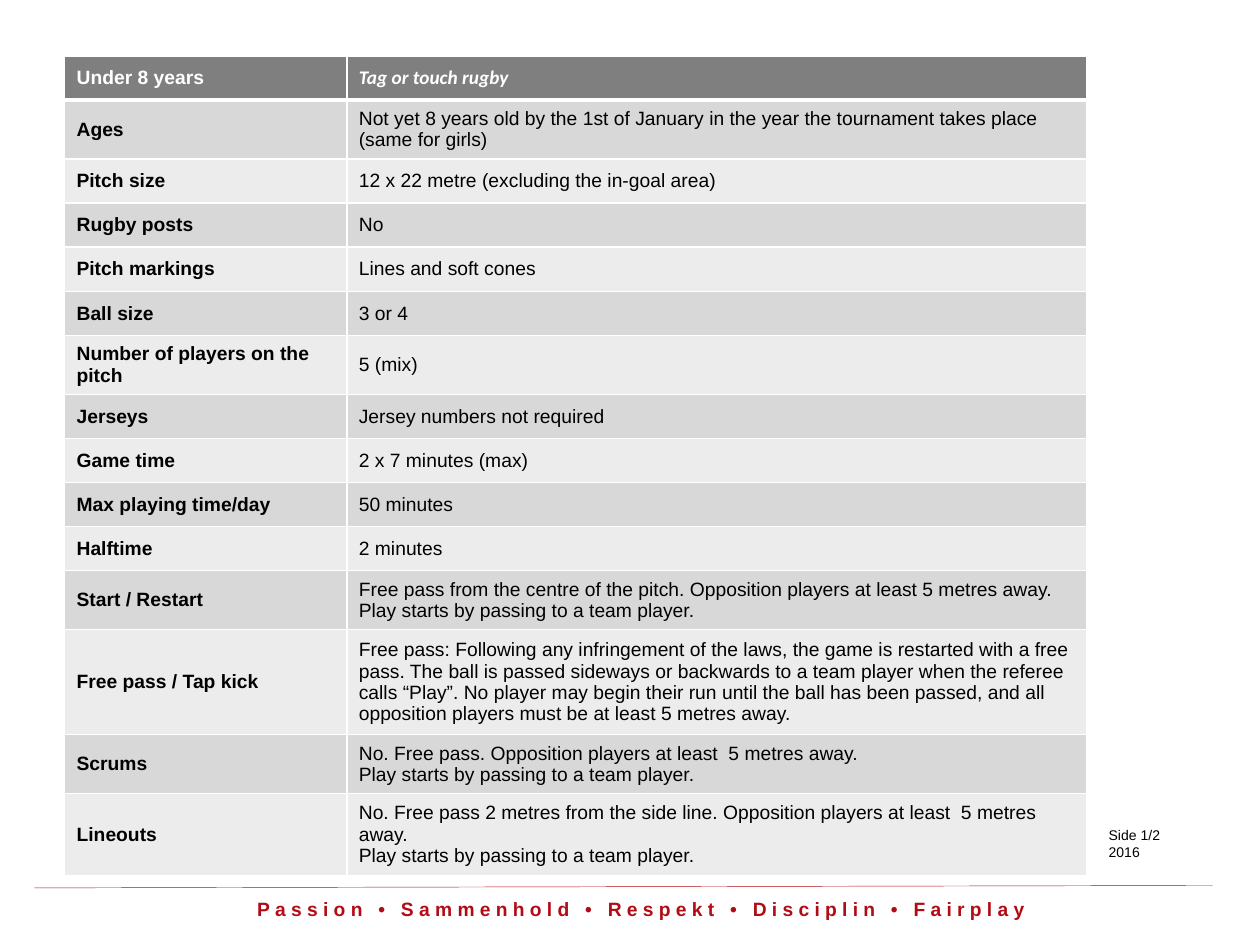
from lxml.etree import SubElement
from pptx import Presentation
from pptx.dml.color import RGBColor
from pptx.enum.shapes import MSO_CONNECTOR
from pptx.enum.text import MSO_ANCHOR, PP_ALIGN
from pptx.oxml.ns import qn
from pptx.util import Pt

COLORS = {"red": "B10C15", "header": "7F7F7F", "dark": "D8D8D8",
          "light": "ECECEC", "white": "FFFFFF", "black": "000000"}


def write_text(frame, text, size=11, color="black", font="Arial", bold=False,
               italic=False, align=PP_ALIGN.LEFT, spacing=0):
    frame.word_wrap = True
    for index, line in enumerate(text.split("\n")):
        paragraph = frame.paragraphs[0] if index == 0 else frame.add_paragraph()
        paragraph.alignment = align
        run = paragraph.add_run()
        run.text = line
        run.font.size = Pt(size)
        run.font.name = font
        run.font.bold = bold
        run.font.italic = italic
        run.font.color.rgb = RGBColor.from_string(COLORS[color])
        if spacing:
            run._r.get_or_add_rPr().set("spc", str(spacing * 100))


def set_borders(cell, widths):
    properties = cell._tc.get_or_add_tcPr()
    for position, (side, width) in enumerate(widths.items()):
        border = properties.makeelement(qn(f"a:ln{side}"), {"w": str(Pt(width))})
        solid = SubElement(border, qn("a:solidFill"))
        SubElement(solid, qn("a:srgbClr"), val=COLORS["white"])
        properties.insert(position, border)


presentation = Presentation()
presentation.slide_width = Pt(720)
presentation.slide_height = Pt(540)
slide = presentation.slides.add_slide(presentation.slide_layouts[6])

motto = slide.shapes.add_textbox(Pt(121), Pt(509), Pt(491), Pt(33.8))
write_text(motto.text_frame, "Passion • Sammenhold • Respekt • Disciplin • Fairplay",
           color="red", bold=True, align=PP_ALIGN.CENTER, spacing=3)

footer_rule = slide.shapes.add_connector(
    MSO_CONNECTOR.STRAIGHT, Pt(19.6), Pt(507.4), Pt(692.8), Pt(506))
footer_rule.line.color.rgb = RGBColor.from_string(COLORS["red"])
footer_rule.line.width = Pt(0.25)
SubElement(footer_rule._element.spPr, qn("a:effectLst"))

rules = [
    ("Under 8 years", "Tag or touch rugby", 25.2),
    ("Ages", "Not yet 8 years old by the 1st of January in the year the tournament "
             "takes place\n(same for girls)", 33.6),
    ("Pitch size", "12 x 22 metre (excluding the in-goal area)", 25.2),
    ("Rugby posts", "No", 25.2),
    ("Pitch markings", "Lines and soft cones", 25.2),
    ("Ball size", "3 or 4", 25.2),
    ("Number of players on the pitch", "5 (mix)", 33.6),
    ("Jerseys", "Jersey numbers not required", 25.2),
    ("Game time", "2 x 7 minutes (max)", 25.2),
    ("Max playing time/day", "50 minutes", 25.2),
    ("Halftime", "2 minutes", 25.2),
    ("Start / Restart", "Free pass from the centre of the pitch. Opposition players at "
                        "least 5 metres away. Play starts by passing to a team player.", 33.6),
    ("Free pass / Tap kick",
     "Free pass: Following any infringement of the laws, the game is restarted with a free "
     "pass. The ball is passed sideways or backwards to a team player when the referee calls "
     "“Play”. No player may begin their run until the ball has been passed, and all "
     "opposition players must be at least 5 metres away.", 60),
    ("Scrums", "No. Free pass. Opposition players at least  5 metres away.\n"
               "Play starts by passing to a team player.", 33.6),
    ("Lineouts", "No. Free pass 2 metres from the side line. Opposition players at least  "
                 "5 metres away.\nPlay starts by passing to a team player.", 46.8),
]
total_height = sum(height for _, _, height in rules)
rules_table = slide.shapes.add_table(
    len(rules), 2, Pt(37), Pt(32), Pt(584), Pt(total_height)).table
rules_table.columns[0].width = Pt(161.3)
rules_table.columns[1].width = Pt(422.7)

for row, (topic, rule, height) in enumerate(rules):
    rules_table.rows[row].height = Pt(height)
    is_header = row == 0
    fill = "header" if is_header else ("dark" if row % 2 else "light")
    for column, text in enumerate((topic, rule)):
        cell = rules_table.cell(row, column)
        cell.vertical_anchor = MSO_ANCHOR.MIDDLE
        cell.margin_left = cell.margin_right = Pt(6.8)
        cell.fill.solid()
        cell.fill.fore_color.rgb = RGBColor.from_string(COLORS[fill])
        set_borders(cell, {"L": 1, "R": 1, "T": 3 if row == 1 else 1,
                           "B": 3 if is_header else 1})
        is_subtitle = is_header and column == 1
        write_text(cell.text_frame, text, bold=is_header or column == 0,
                   italic=is_subtitle, font="Calibri" if is_subtitle else "Arial",
                   color="white" if is_header else "black")

page_note = slide.shapes.add_textbox(Pt(626.4), Pt(468.7), Pt(82), Pt(26.6))
write_text(page_note.text_frame, "Side 1/2\n2016", size=8)

presentation.save("out.pptx")
